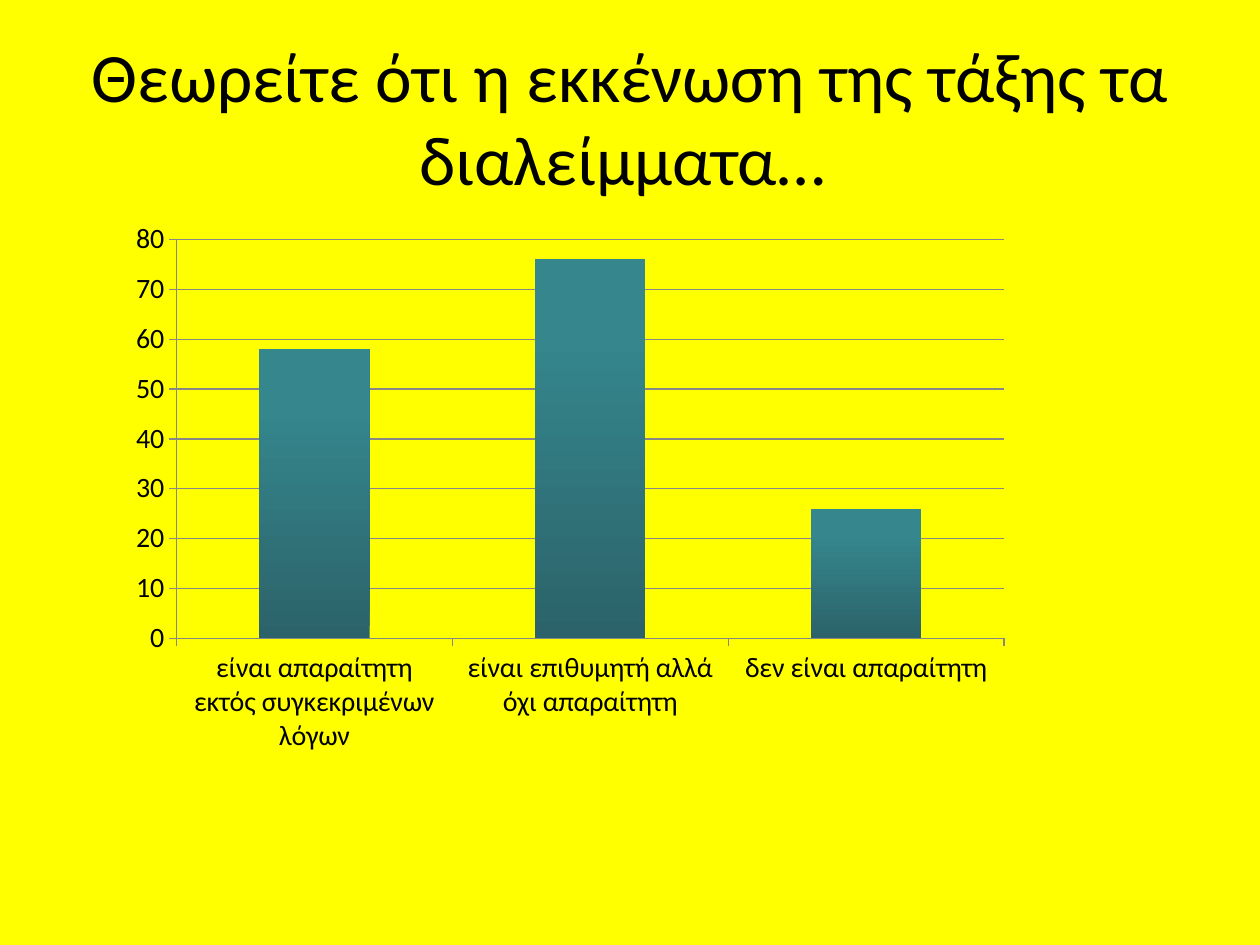
from dataclasses import dataclass

from lxml import etree
from pptx import Presentation
from pptx.chart.data import CategoryChartData
from pptx.dml.color import RGBColor
from pptx.enum.chart import XL_CHART_TYPE, XL_TICK_MARK
from pptx.enum.text import MSO_ANCHOR, MSO_AUTO_SIZE, PP_ALIGN
from pptx.oxml.ns import qn
from pptx.util import Cm, Pt

COLUMNS = XL_CHART_TYPE.COLUMN_CLUSTERED
TICK_OUTSIDE = XL_TICK_MARK.OUTSIDE
TICK_NONE = XL_TICK_MARK.NONE
CENTER = PP_ALIGN.CENTER
MIDDLE = MSO_ANCHOR.MIDDLE
NO_AUTOFIT = MSO_AUTO_SIZE.NONE
TITLE_ONLY_LAYOUT = 5


@dataclass(frozen=True)
class Theme:
    font: str = "Calibri"
    background: RGBColor = RGBColor(0xFF, 0xFF, 0x00)
    text: RGBColor = RGBColor(0x00, 0x00, 0x00)
    axis: RGBColor = RGBColor(0x87, 0x87, 0x87)
    bar_top: RGBColor = RGBColor(0x35, 0x86, 0x8D)
    bar_bottom: RGBColor = RGBColor(0x2C, 0x63, 0x6A)
    title_size: float = 39.6
    chart_size: float = 16
    axis_width: float = 0.75


def set_values(target, values):
    for name, value in values.items():
        setattr(target, name, value)


class SurveySlide:
    def __init__(self, slide, theme):
        self.slide = slide
        self.theme = theme
        fill = slide.background.fill
        fill.solid()
        fill.fore_color.rgb = theme.background

    def style_font(self, font, size):
        set_values(font, {"name": self.theme.font, "size": Pt(size), "bold": False})
        font.color.rgb = self.theme.text

    def style_line(self, line):
        line.color.rgb = self.theme.axis
        line.width = Pt(self.theme.axis_width)

    def add_title(self, text, left, top, width, height):
        title = self.slide.shapes.title
        set_values(title, {"left": Cm(left), "top": Cm(top),
                           "width": Cm(width), "height": Cm(height)})
        frame = title.text_frame
        set_values(frame, {"text": text, "word_wrap": True,
                           "auto_size": NO_AUTOFIT, "vertical_anchor": MIDDLE})
        paragraph = frame.paragraphs[0]
        paragraph.alignment = CENTER
        self.style_font(paragraph.runs[0].font, self.theme.title_size)

    def add_column_chart(self, series_name, answers, left, top, width, height):
        chart_data = CategoryChartData()
        chart_data.categories = list(answers)
        chart_data.add_series(series_name, list(answers.values()))
        chart = self.slide.shapes.add_chart(
            COLUMNS, Cm(left), Cm(top), Cm(width), Cm(height), chart_data).chart
        set_values(chart, {"has_legend": False, "has_title": False})
        self.style_font(chart.font, self.theme.chart_size)

        plot = chart.plots[0]
        set_values(plot, {"gap_width": 150, "vary_by_categories": False})
        self.shade_bars(plot.series[0].format.fill)

        for axis in (chart.category_axis, chart.value_axis):
            set_values(axis, {"major_tick_mark": TICK_OUTSIDE,
                              "minor_tick_mark": TICK_NONE})
            self.style_line(axis.format.line)
        set_values(chart.value_axis, {"minimum_scale": 0, "maximum_scale": 80,
                                      "major_unit": 10, "has_major_gridlines": True})
        self.style_line(chart.value_axis.major_gridlines.format.line)
        return chart

    def shade_bars(self, fill):
        """Run the gradient upwards, flat over the top fifth of each bar."""
        fill.gradient()
        fill.gradient_angle = 90
        stops = ((0, self.theme.bar_bottom), (0.8, self.theme.bar_top))
        for stop, (position, color) in zip(fill.gradient_stops, stops):
            stop.position = position
            stop.color.rgb = color

    def place_plot(self, chart, x, y, w, h):
        """Fix the inner plot area, given as fractions of the chart."""
        plot_area = chart.plots[0]._element.getparent()
        for old_layout in plot_area.findall(qn("c:layout")):
            plot_area.remove(old_layout)
        layout = etree.Element(qn("c:layout"))
        plot_area.insert(0, layout)
        manual = etree.SubElement(layout, qn("c:manualLayout"))
        values = {"layoutTarget": "inner", "xMode": "edge", "yMode": "edge",
                  "x": x, "y": y, "w": w, "h": h}
        for name, value in values.items():
            etree.SubElement(manual, qn(f"c:{name}"), val=str(value))


def main():
    presentation = Presentation()
    set_values(presentation, {"slide_width": Cm(25.4), "slide_height": Cm(19.05)})
    layout = presentation.slide_layouts[TITLE_ONLY_LAYOUT]
    survey = SurveySlide(presentation.slides.add_slide(layout), Theme())

    margin, content_width = 1.27, 22.86
    survey.add_title("Θεωρείτε ότι η εκκένωση της τάξης τα διαλείμματα… ",
                     margin, 0.76, content_width, 3.18)
    answers = {
        "είναι απαραίτητη εκτός συγκεκριμένων λόγων": 58,
        "είναι επιθυμητή αλλά όχι απαραίτητη": 76,
        "δεν είναι απαραίτητη": 26,
    }
    chart = survey.add_column_chart("Series 1", answers,
                                    margin, 4.45, content_width, 12.57)
    survey.place_plot(chart, 0.1, 0.03, 0.73, 0.64)
    presentation.save("out.pptx")


if __name__ == "__main__":
    main()
